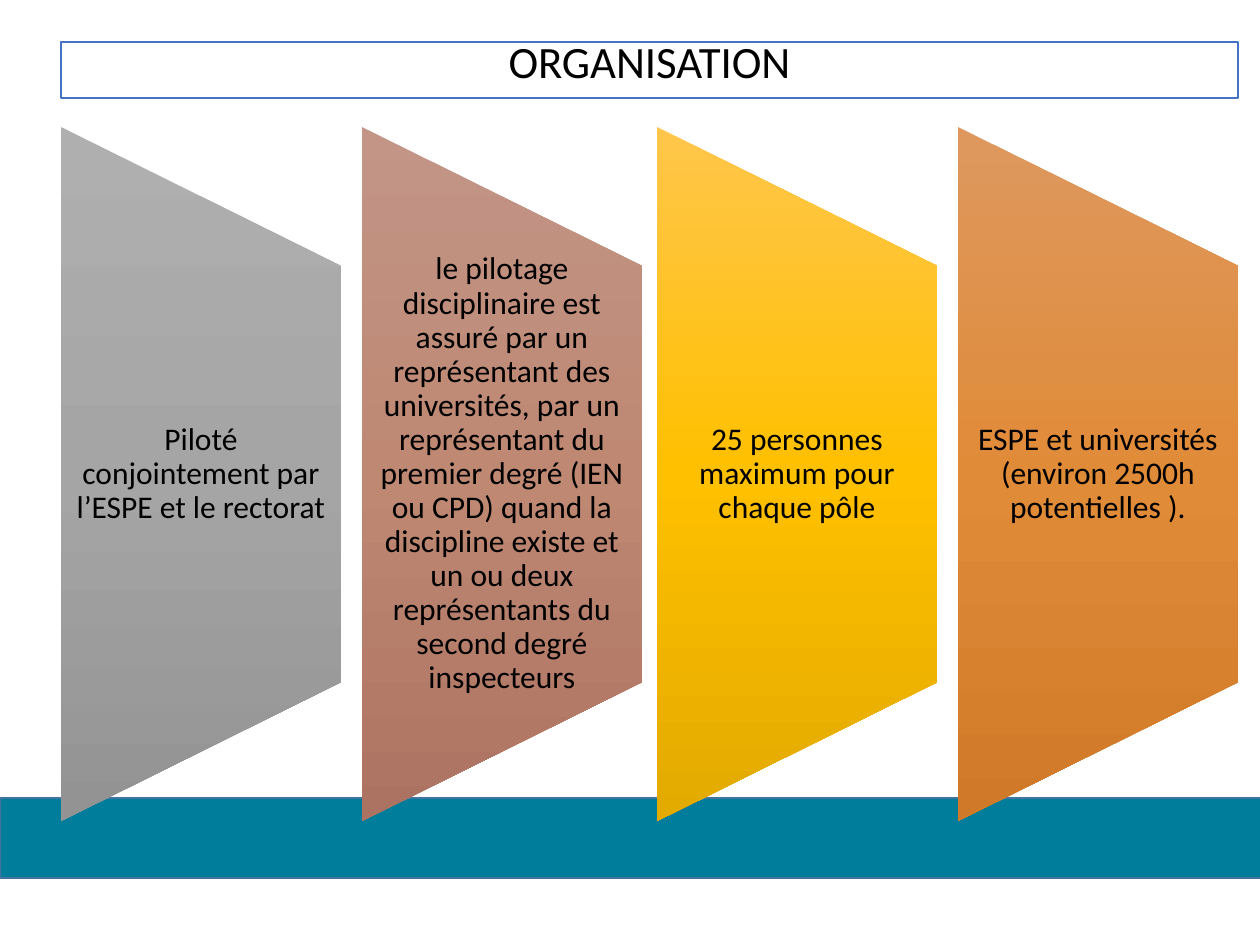
from lxml.etree import SubElement
from pptx import Presentation
from pptx.dml.color import RGBColor
from pptx.enum.shapes import MSO_SHAPE as Shape
from pptx.enum.text import MSO_ANCHOR as Anchor, PP_ALIGN as Align
from pptx.oxml.ns import qn
from pptx.util import Pt

PX = 914400 // 126
PANEL_TOP, PANEL_WIDTH, PANEL_HEIGHT = 127, 280, 694
PANELS = [
    (61, "Piloté conjointement par l’ESPE et le rectorat",
     ("AFAFAF", "A5A5A5", "939393")),
    (362, "le pilotage disciplinaire est assuré par un représentant des "
     "universités, par un représentant du premier degré (IEN ou CPD) quand la "
     "discipline existe et un ou deux représentants du second degré inspecteurs",
     ("C29587", "BE8873", "AD7362")),
    (657, "25 personnes maximum pour chaque pôle",
     ("FFC64B", "FFC000", "E3AA00")),
    (958, "ESPE et universités (environ 2500h potentielles ).",
     ("DE985E", "E08B38", "D07A29")),
]


def color(value):
    return RGBColor.from_string(value)


def assign(target, values):
    for name, value in values.items():
        setattr(target, name, value)


class SlideBuilder:
    font = "Calibri"
    ink = "000000"

    def __init__(self, page):
        self.page = page

    def caption(self, shape, text, size, spacing, frame_format):
        frame = shape.text_frame
        assign(frame, {"word_wrap": True, **frame_format})
        para = frame.paragraphs[0]
        assign(para, {"alignment": Align.CENTER, "line_spacing": spacing})
        span = para.add_run()
        span.text = text
        assign(span.font, {"name": self.font, "size": Pt(size)})
        span.font.color.rgb = color(self.ink)

    def shape(self, kind, left, top, width, height):
        shape = self.page.shapes.add_shape(
            kind, left * PX, top * PX, width * PX, height * PX)
        shape.shadow.inherit = False
        return shape

    def box(self, left, top, width, height, fill, line):
        box = self.shape(Shape.RECTANGLE, left, top, width, height)
        box.fill.solid()
        box.fill.fore_color.rgb = color(fill)
        box.line.color.rgb = color(line)
        box.line.width = Pt(1)
        return box

    def panel(self, left, top, width, height, stops):
        shift = (height - width) // 2
        panel = self.shape(Shape.FLOWCHART_MANUAL_OPERATION,
                           left - shift, top + shift, height, width)
        panel.rotation = 270
        panel.line.fill.background()
        panel.fill.gradient()
        panel.fill.gradient_angle = 270
        gradient = panel._element.spPr.find(qn("a:gradFill"))
        gradient.set("rotWithShape", "0")
        stop_list = gradient.find(qn("a:gsLst"))
        for stop in list(stop_list):
            stop_list.remove(stop)
        for index, value in enumerate(stops):
            stop = SubElement(stop_list, qn("a:gs"), pos=str(index * 50000))
            SubElement(stop, qn("a:srgbClr"), val=value)

    def label(self, left, top, width, height, text):
        label = self.page.shapes.add_textbox(
            left * PX, top * PX, width * PX, height * PX)
        self.caption(label, text, 18, 0.9, {
            "vertical_anchor": Anchor.MIDDLE, "margin_left": 15 * PX,
            "margin_right": 15 * PX, "margin_top": 0, "margin_bottom": 0})


def main():
    deck = Presentation()
    assign(deck, {"slide_width": 1260 * PX, "slide_height": 945 * PX})
    builder = SlideBuilder(deck.slides.add_slide(deck.slide_layouts[6]))

    builder.box(0, 798, 1261, 80, "007D9B", "43739E")
    title = builder.box(61, 42, 1177, 56, "FFFFFF", "4472C4")
    builder.caption(title, "ORGANISATION", 25.6, 0.7,
                    {"vertical_anchor": Anchor.TOP})

    inset = PANEL_HEIGHT // 5
    for left, text, stops in PANELS:
        builder.panel(left, PANEL_TOP, PANEL_WIDTH, PANEL_HEIGHT, stops)
        builder.label(left, PANEL_TOP + inset, PANEL_WIDTH,
                      PANEL_HEIGHT - 2 * inset, text)

    deck.save("out.pptx")


if __name__ == "__main__":
    main()
